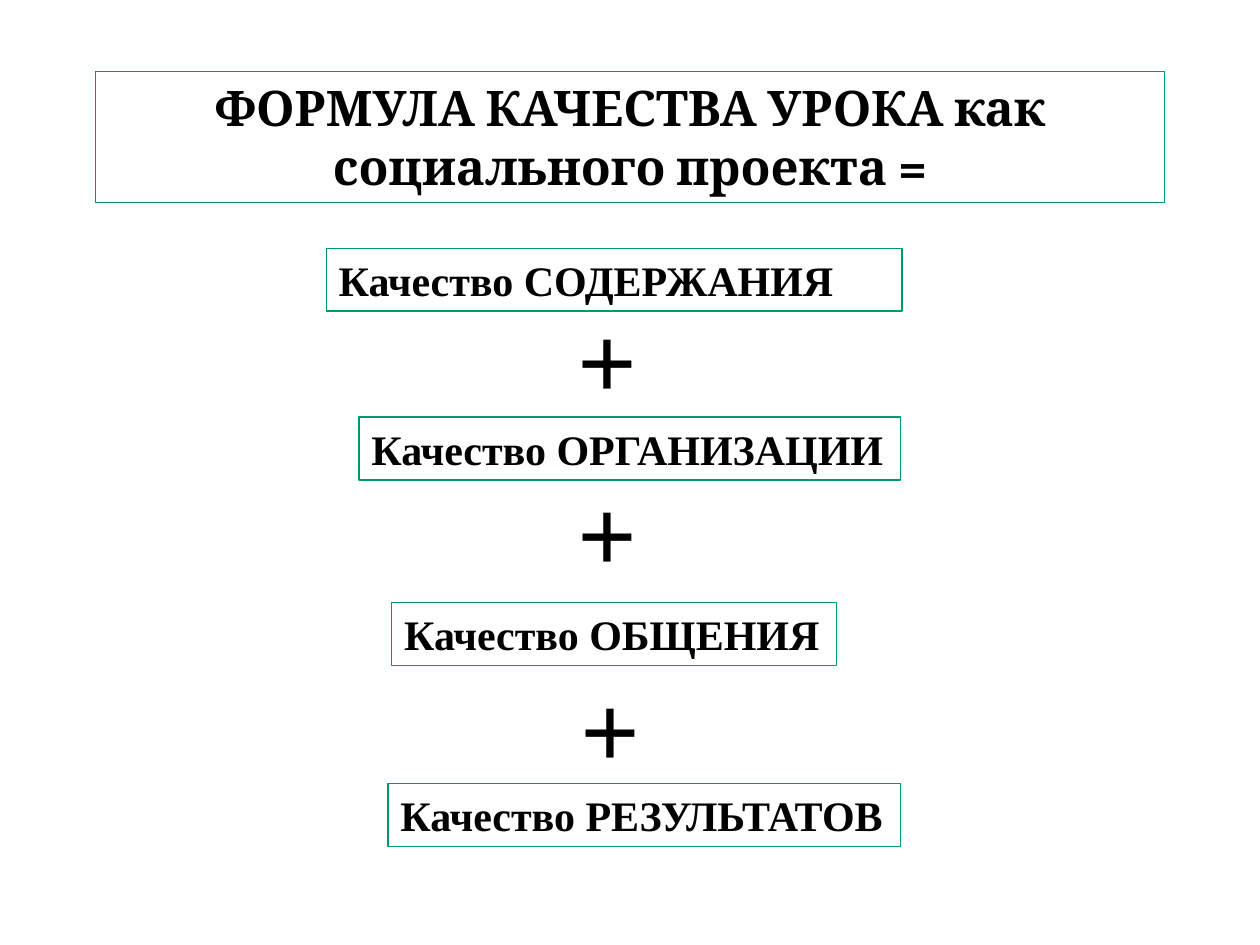
from pptx import Presentation
from pptx.dml.color import RGBColor
from pptx.enum.shapes import MSO_SHAPE
from pptx.enum.text import MSO_ANCHOR, MSO_AUTO_SIZE, PP_ALIGN
from pptx.util import Inches, Pt

RECTANGLE = MSO_SHAPE.RECTANGLE
TOP = MSO_ANCHOR.TOP
GROW = MSO_AUTO_SIZE.SHAPE_TO_FIT_TEXT
LEFT, CENTER = PP_ALIGN.LEFT, PP_ALIGN.CENTER

BODY_FONT = "Times New Roman"
TERM_HEIGHT = 0.5
PLUS_WIDTH, PLUS_HEIGHT = 0.98, 1.11


def color(value):
    return RGBColor.from_string(value)


def add_text(text, left, top, width, height, size=24, font=BODY_FONT,
             align=LEFT, wrap=True, framed=True, inset=0.1):
    """Add bold black text, in a green-edged white rectangle when framed."""
    area = [Inches(length) for length in (left, top, width, height)]
    if framed:
        shape = slide.shapes.add_shape(RECTANGLE, *area)
        shape.shadow.inherit = False
        shape.fill.solid()
        shape.fill.fore_color.rgb = color("FFFFFF")
        shape.line.color.rgb = color("009771")
        shape.line.width = Pt(0.75)
    else:
        shape = slide.shapes.add_textbox(*area)
    frame = shape.text_frame
    frame.word_wrap = wrap
    frame.auto_size = GROW
    frame.vertical_anchor = TOP
    frame.margin_left = Inches(inset)
    paragraph = frame.paragraphs[0]
    paragraph.alignment = align
    run = paragraph.add_run()
    run.text = text
    run.font.name = font
    run.font.size = Pt(size)
    run.font.bold = True
    run.font.color.rgb = color("000000")


presentation = Presentation()
presentation.slide_width = Inches(10)
presentation.slide_height = Inches(7.5)
slide = presentation.slides.add_slide(presentation.slide_layouts[6])

add_text("ФОРМУЛА КАЧЕСТВА УРОКА как социального проекта =",
         0.76, 0.57, 8.48, 1.04, size=28, font="Cambria", align=CENTER)

terms = [
    ("СОДЕРЖАНИЯ", 2.59, 1.97, 4.57, True),
    ("ОРГАНИЗАЦИИ", 2.85, 3.31, 4.3, False),
    ("ОБЩЕНИЯ", 3.11, 4.78, 3.53, False),
    ("РЕЗУЛЬТАТОВ", 3.08, 6.22, 4.07, False),
]
for term, left, top, width, wrap in terms:
    add_text(f"Качество {term}", left, top, width, TERM_HEIGHT, wrap=wrap)

for left, top in [(4.27, 2.29), (4.27, 3.66), (4.3, 5.22)]:
    add_text("+", left, top, PLUS_WIDTH, PLUS_HEIGHT,
             size=60, framed=False, inset=0.31)

presentation.save("out.pptx")
